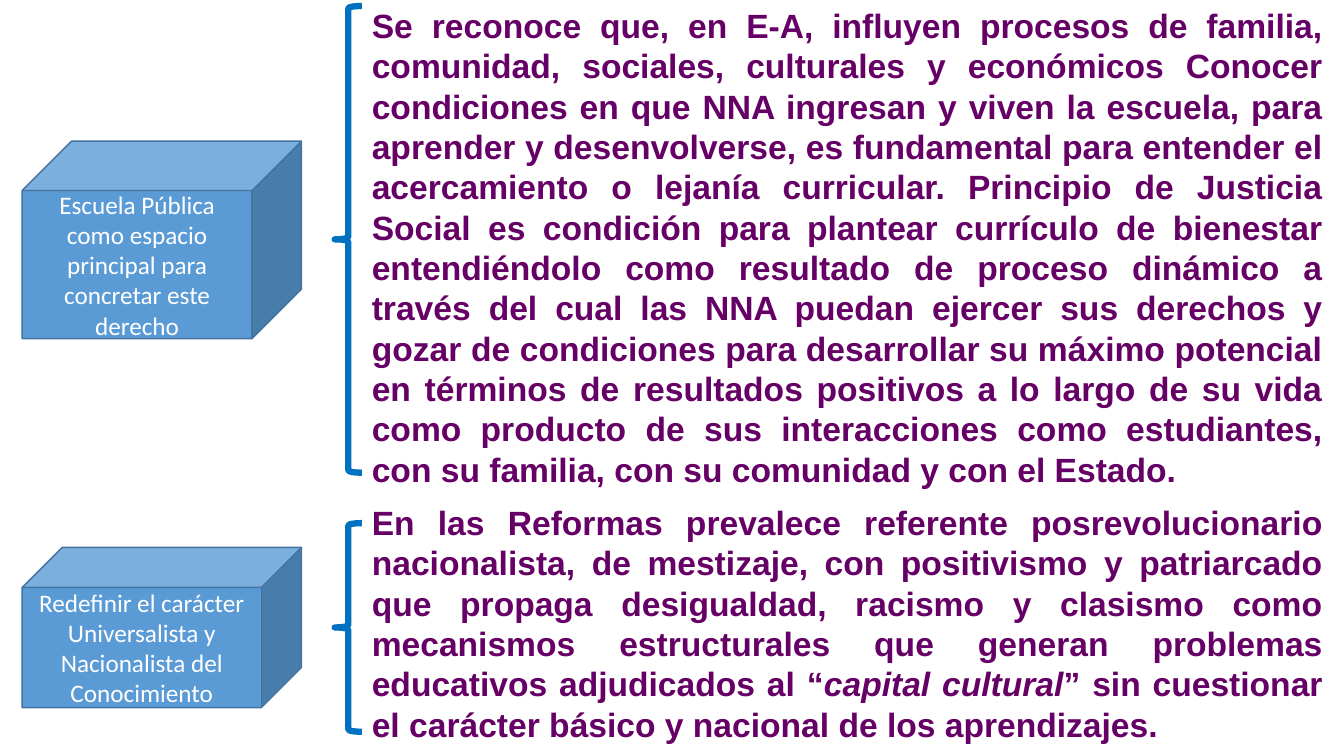
from dataclasses import dataclass

from pptx import Presentation
from pptx import util as u
from pptx.dml.color import RGBColor
from pptx.enum import shapes, text


@dataclass(frozen=True)
class Theme:
    cube_fill: str = "5B9BD5"
    cube_line: str = "43739E"
    brace: str = "0070C0"
    body: dict = None
    label: dict = None


THEME = Theme(
    body={"name": "Arial", "size": u.Pt(24), "bold": True, "color": "660066"},
    label={"name": "Calibri", "size": u.Pt(18), "color": "FFFFFF"},
)

WIDTH, HEIGHT = u.Inches(13.333), u.Inches(7.5)
COL, ROW = WIDTH / 100, HEIGHT / 100

CUBE_COLS = (1.65, 20.78)
BRACE_COLS = (24.9, 2.03)
BODY_COLS = (26.93, 72.22)

BANDS = [
    {
        "box": (0, 0, 100, 66),
        "cube_rows": (18.67, 26.13),
        "brace_rows": (0.8, 61.73),
        "label": "Escuela Pública como espacio principal para concretar este derecho",
        "body": [
            ("Se reconoce que, en E-A, influyen procesos de familia, comunidad, "
             "sociales, culturales y económicos Conocer condiciones en que NNA "
             "ingresan y viven la escuela, para aprender y desenvolverse, es "
             "fundamental para entender el acercamiento o lejanía curricular. "
             "Principio de Justicia Social es condición para plantear currículo "
             "de bienestar entendiéndolo como resultado de proceso dinámico a "
             "través del cual las NNA puedan ejercer sus derechos y gozar de "
             "condiciones para desarrollar su máximo potencial en términos de "
             "resultados positivos a lo largo de su vida como producto de sus "
             "interacciones como estudiantes, con su familia, con su comunidad "
             "y con el Estado.", {}),
        ],
    },
    {
        "box": (0, 65.73, 100, 33.6),
        "cube_rows": (6.67, 21.2),
        "brace_rows": (3.47, 27.6),
        "label": "Redefinir el carácter Universalista y Nacionalista del Conocimiento",
        "body": [
            ("En las Reformas prevalece referente posrevolucionario nacionalista, "
             "de mestizaje, con positivismo y patriarcado que propaga desigualdad, "
             "racismo y clasismo como mecanismos estructurales que generan "
             "problemas educativos adjudicados al “", {}),
            ("capital cultural", {"italic": True}),
            ("” sin cuestionar el carácter básico y nacional de los aprendizajes.", {}),
        ],
    },
]


def place(box, cols, rows):
    x, y = box[:2]
    return [round(v) for v in ((x + cols[0]) * COL, (y + rows[0]) * ROW,
                               cols[1] * COL, rows[1] * ROW)]


def write(tf, runs, style, align):
    tf.word_wrap = True
    p = tf.paragraphs[0]
    p.alignment = align
    for words, extra in runs:
        r = p.add_run()
        r.text = words
        for key, value in {**style, **extra}.items():
            if key == "color":
                r.font.color.rgb = RGBColor.from_string(value)
            else:
                setattr(r.font, key, value)


def add_outlined(s, kind, area, color, width):
    sp = s.shapes.add_shape(kind, *area)
    sp.shadow.inherit = False
    sp.line.color.rgb = RGBColor.from_string(color)
    sp.line.width = u.Pt(width)
    return sp


def add_band(s, box, cube_rows, brace_rows, label, body):
    tf = s.shapes.add_textbox(*place(box, BODY_COLS, (0, box[3]))).text_frame
    write(tf, body, THEME.body, text.PP_ALIGN.JUSTIFY)
    tf.auto_size = text.MSO_AUTO_SIZE.SHAPE_TO_FIT_TEXT

    brace = add_outlined(s, shapes.MSO_SHAPE.LEFT_BRACE,
                         place(box, BRACE_COLS, brace_rows), THEME.brace, 4.5)
    brace.fill.background()

    cube = add_outlined(s, shapes.MSO_SHAPE.CUBE,
                        place(box, CUBE_COLS, cube_rows), THEME.cube_line, 1)
    cube.fill.solid()
    cube.fill.fore_color.rgb = RGBColor.from_string(THEME.cube_fill)
    cube.text_frame.vertical_anchor = text.MSO_ANCHOR.MIDDLE
    write(cube.text_frame, [(label, {})], THEME.label, text.PP_ALIGN.CENTER)


def main():
    prs = Presentation()
    prs.slide_width, prs.slide_height = WIDTH, HEIGHT
    s = prs.slides.add_slide(prs.slide_layouts[6])
    for band in BANDS:
        add_band(s, **band)
    prs.save("out.pptx")


if __name__ == "__main__":
    main()
